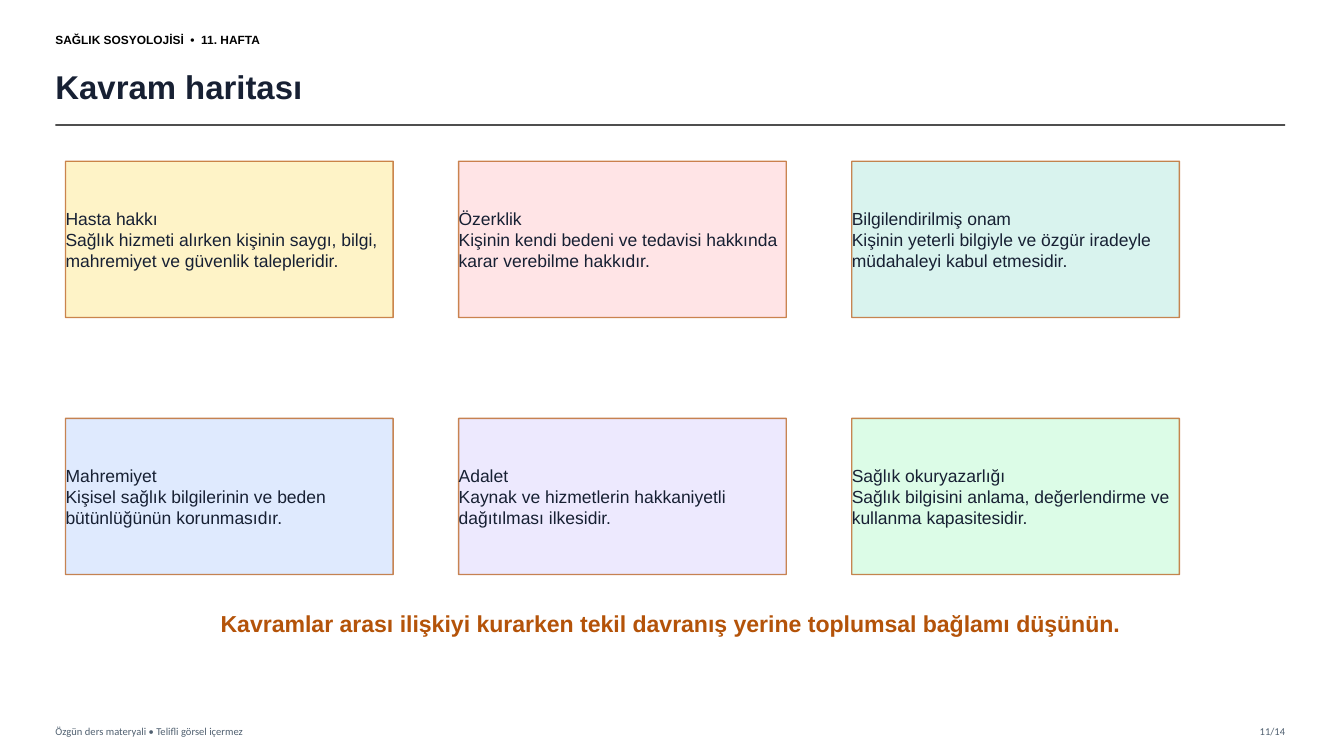
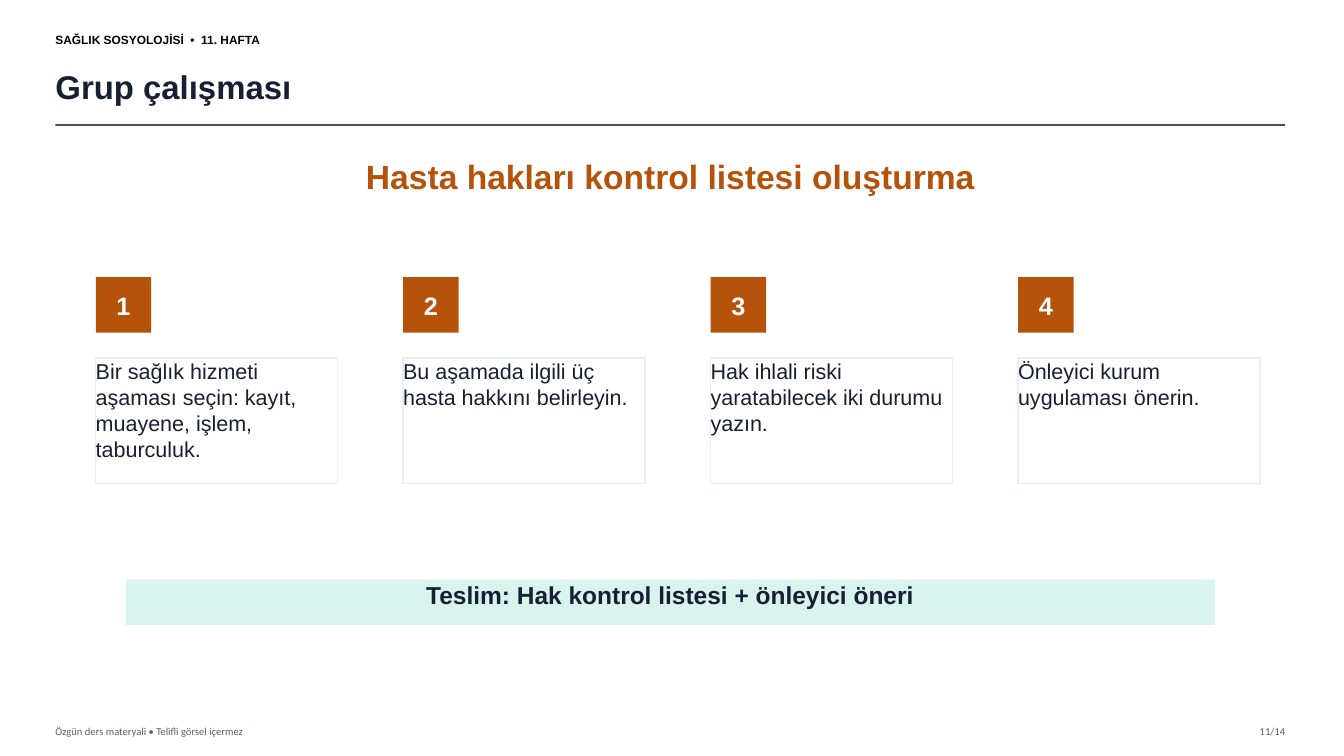
from pptx import Presentation
from pptx.dml.color import RGBColor
from pptx.enum.shapes import MSO_CONNECTOR as Connector, MSO_SHAPE as Preset
from pptx.enum.text import MSO_ANCHOR as Anchor, PP_ALIGN as Align
from pptx.oxml.ns import qn
from pptx.util import Inches, Pt
from lxml.etree import SubElement

COLORS = {
    "white": "FFFFFF", "black": "000000", "ink": "172033", "rule": "333333",
    "muted": "506070", "accent": "B45309", "frame": "E8EEF5",
    "yellow": "FEF3C7", "rose": "FFE4E6", "teal": "D9F3EE",
    "blue": "DFEAFE", "violet": "EDE9FE", "green": "DCFCE7",
}
GRID = 0.1

CONCEPTS = [
    ("yellow", "Hasta hakkı",
     "Sağlık hizmeti alırken kişinin saygı, bilgi, mahremiyet ve güvenlik talepleridir."),
    ("rose", "Özerklik",
     "Kişinin kendi bedeni ve tedavisi hakkında karar verebilme hakkıdır."),
    ("teal", "Bilgilendirilmiş onam",
     "Kişinin yeterli bilgiyle ve özgür iradeyle müdahaleyi kabul etmesidir."),
    ("blue", "Mahremiyet",
     "Kişisel sağlık bilgilerinin ve beden bütünlüğünün korunmasıdır."),
    ("violet", "Adalet",
     "Kaynak ve hizmetlerin hakkaniyetli dağıtılması ilkesidir."),
    ("green", "Sağlık okuryazarlığı",
     "Sağlık bilgisini anlama, değerlendirme ve kullanma kapasitesidir."),
]
STEPS = [
    "Bir sağlık hizmeti aşaması seçin: kayıt, muayene, işlem, taburculuk.",
    "Bu aşamada ilgili üç hasta hakkını belirleyin.",
    "Hak ihlali riski yaratabilecek iki durumu yazın.",
    "Önleyici kurum uygulaması önerin.",
]


def cells(*counts):
    """Turn counts of grid columns or rows into lengths."""
    return [Inches(count * GRID) for count in counts]


class Deck:
    """Hold the lesson style and the current page."""

    def __init__(self):
        """Open an empty widescreen deck."""
        self.deck = Presentation()
        self.deck.slide_width, self.deck.slide_height = cells(133.33, 75)
        self.page = None

    def add_page(self, title):
        """Start a page with its header, rule and footer."""
        self.page = self.deck.slides.add_slide(self.deck.slide_layouts[6])
        self.text((5.5, 2.5, 36, 2.8), "SAĞLIK SOSYOLOJİSİ  •  11. HAFTA", 8.5,
                  "black", bold=True, anchor=Anchor.MIDDLE)
        self.text((5.5, 5.8, 119.5, 5.5), title, 23.5, bold=True, anchor=Anchor.MIDDLE)
        self.rule(5.5, 127.5, 12.4)
        footer = {"color": "muted", "font": "Calibri", "anchor": Anchor.MIDDLE}
        self.text((5.5, 71.4, 60, 2.2), "Özgün ders materyali • Telifli görsel içermez",
                  7.5, **footer)
        self.text((121, 71.4, 6.5, 2.2), "11/14", 7.5, align=Align.RIGHT, **footer)

    def set_text(self, shape, text, size, color="ink", font="Arial", bold=False,
                 align=Align.LEFT, anchor=Anchor.TOP):
        """Fill a shape with one paragraph per line of text."""
        frame = shape.text_frame
        frame.word_wrap = True
        frame.vertical_anchor = anchor
        frame.margin_left = frame.margin_right = 0
        frame.margin_top = frame.margin_bottom = 0
        frame.text = text
        for para in frame.paragraphs:
            para.alignment = align
            para.font.name = font
            para.font.size = Pt(size)
            para.font.bold = bold
            para.font.color.rgb = RGBColor.from_string(COLORS[color])

    def text(self, place, text, size, color="ink", **style):
        """Add a text box."""
        box = self.page.shapes.add_textbox(*cells(*place))
        self.set_text(box, text, size, color, **style)

    def panel(self, place, fill, text, size, border=None, opacity=100, **style):
        """Add a filled rectangle with text."""
        box = self.page.shapes.add_shape(Preset.RECTANGLE, *cells(*place))
        box.shadow.inherit = False
        box.fill.solid()
        box.fill.fore_color.rgb = RGBColor.from_string(COLORS[fill])
        if border:
            self.stroke(box, border, 1, opacity)
        else:
            box.line.fill.background()
        self.set_text(box, text, size, **style)

    def rule(self, left, right, row):
        """Add the horizontal rule below the title."""
        line = self.page.shapes.add_connector(
            Connector.STRAIGHT, *cells(left, row, right, row))
        self.stroke(line, "rule", 1.2, 85)
        SubElement(line.element.spPr, qn("a:effectLst"))

    def stroke(self, shape, color, width, opacity):
        """Colour an outline, translucent when opacity is below 100."""
        shape.line.width = Pt(width)
        shape.line.color.rgb = RGBColor.from_string(COLORS[color])
        if opacity < 100:
            tint = shape.element.xpath("./p:spPr/a:ln//a:srgbClr")[0]
            SubElement(tint, qn("a:alpha"), val=str(opacity * 1000))


def concept_map(deck):
    """Build the page of six concepts."""
    deck.add_page("Kavram haritası")
    for index, (fill, name, meaning) in enumerate(CONCEPTS):
        row, column = divmod(index, 3)
        deck.panel((6.5 + 39 * column, 16 + 25.5 * row, 32.5, 15.5), fill,
                   f"{name}\n{meaning}", 12.5, border="accent", opacity=70,
                   anchor=Anchor.MIDDLE)
    deck.text((10, 60.5, 113, 4.5),
              "Kavramlar arası ilişkiyi kurarken tekil davranış yerine "
              "toplumsal bağlamı düşünün.",
              16.5, "accent", bold=True, align=Align.CENTER)


def group_work(deck):
    """Build the page of four numbered steps."""
    deck.add_page("Grup çalışması")
    centred = {"bold": True, "align": Align.CENTER}
    deck.text((7.5, 15.5, 118, 6.5), "Hasta hakları kontrol listesi oluşturma",
              24, "accent", **centred)
    for index, step in enumerate(STEPS):
        left = 9.5 + 30.5 * index
        deck.panel((left, 27.5, 5.5, 5.5), "accent", str(index + 1), 18,
                   color="white", anchor=Anchor.MIDDLE, **centred)
        deck.panel((left, 35.5, 24, 12.5), "white", step, 15.4, border="frame")
    deck.panel((12.5, 57.5, 108, 4.5), "teal",
               "Teslim: Hak kontrol listesi + önleyici öneri", 17.5, **centred)


def main():
    """Build and save the deck."""
    lesson = Deck()
    concept_map(lesson)
    group_work(lesson)
    lesson.deck.save("out.pptx")


if __name__ == "__main__":
    main()
